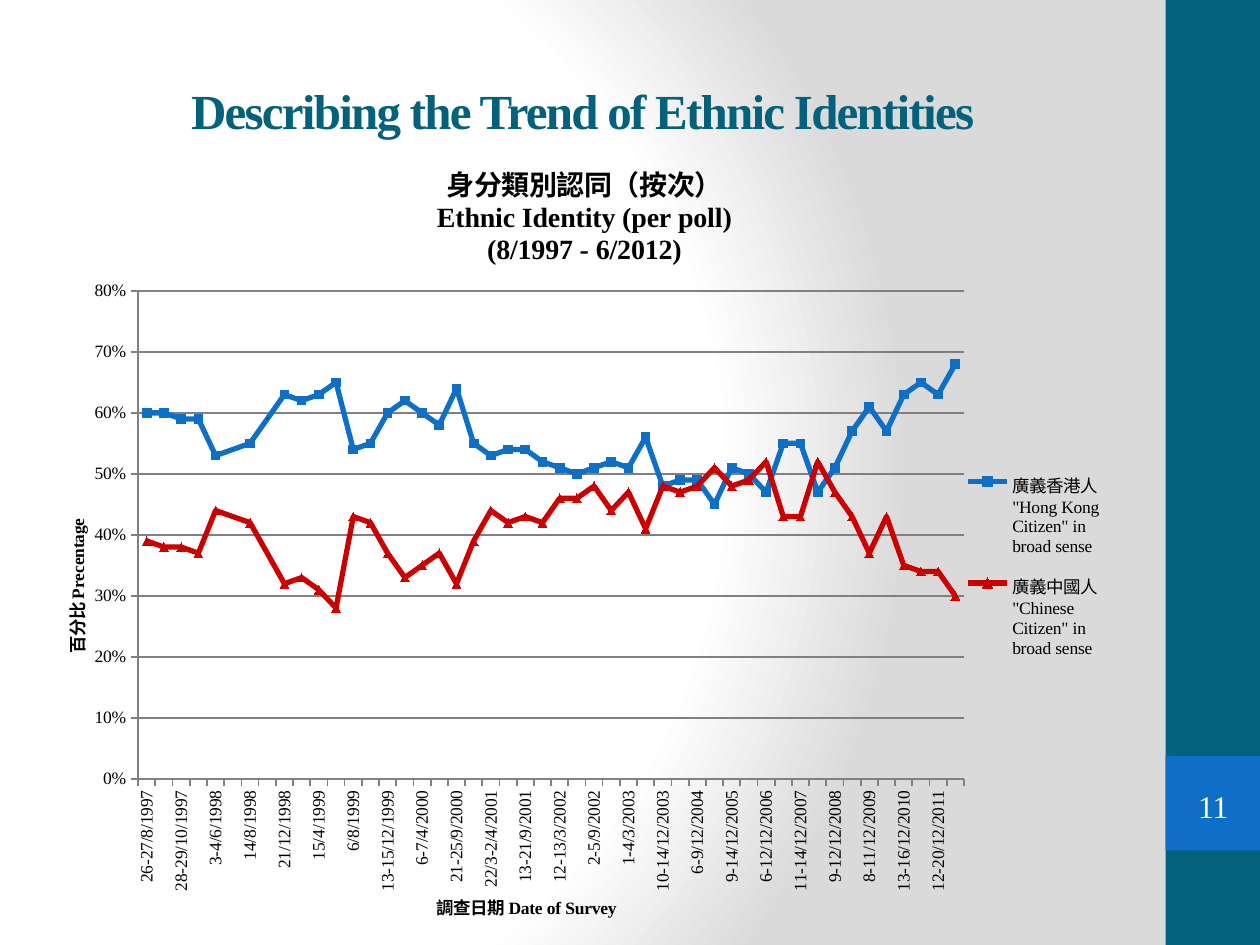
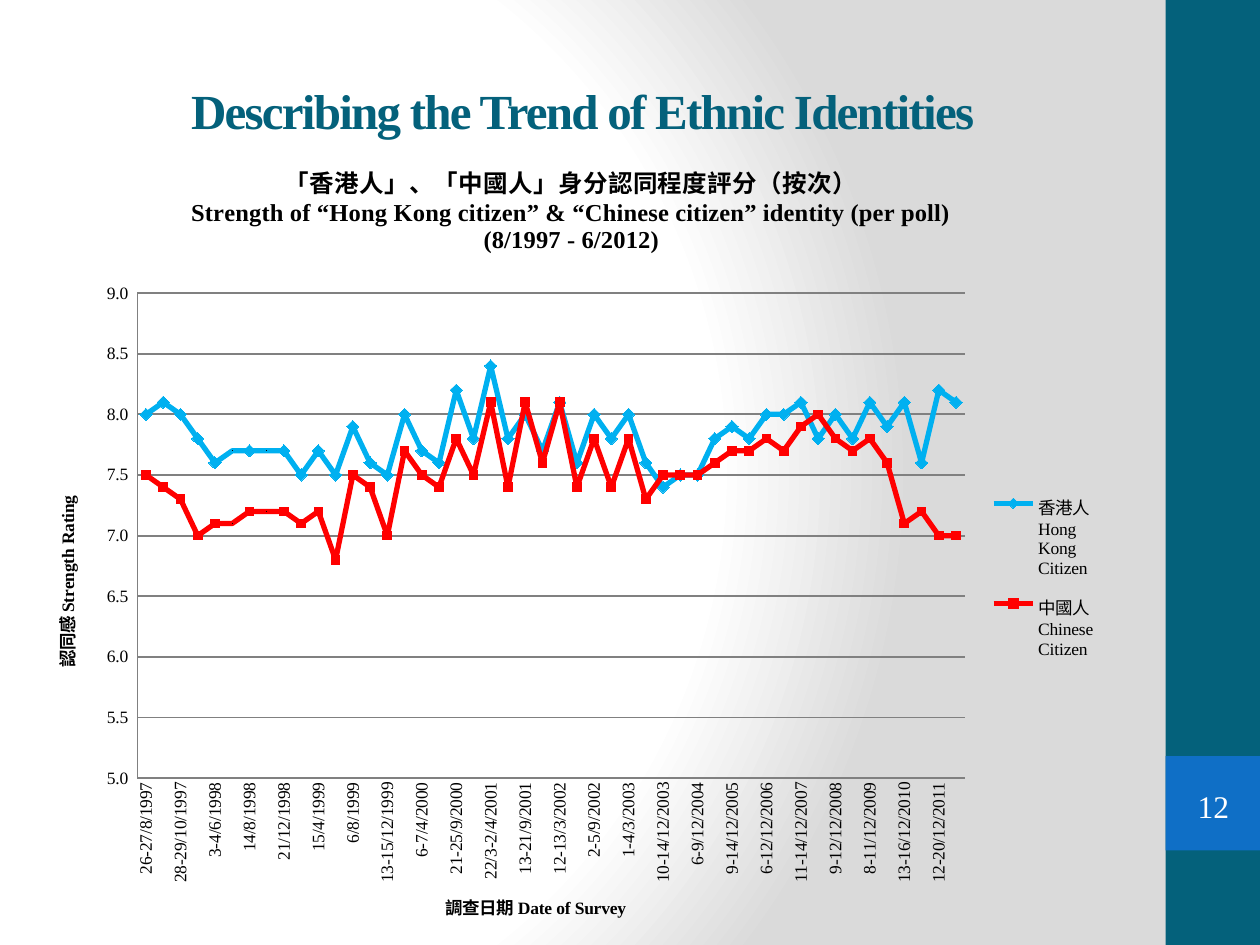
from pptx import Presentation
from pptx.chart.data import CategoryChartData as ChartData
from pptx.dml.color import RGBColor as RGB
from pptx.enum.chart import XL_CHART_TYPE as Kind
from pptx.enum.chart import XL_LEGEND_POSITION as Spot
from pptx.enum.chart import XL_MARKER_STYLE as Mark
from pptx.enum.chart import XL_TICK_MARK as Tick
from pptx.enum.shapes import MSO_SHAPE as Shape
from pptx.enum.text import MSO_ANCHOR as Anchor
from pptx.enum.text import PP_ALIGN as Align
from pptx.oxml import parse_xml
from pptx.oxml.ns import nsdecls
from pptx.util import Inches, Pt

TEAL = RGB(0x04, 0x61, 0x7B)
BLUE = RGB(0x0F, 0x6F, 0xC6)
SKY = RGB(0x00, 0xB0, 0xF0)
CRIMSON = RGB(0xCC, 0x00, 0x00)
RED = RGB(0xFF, 0x00, 0x00)
GRAY = RGB(0x80, 0x80, 0x80)
BLACK = RGB(0x00, 0x00, 0x00)
WHITE = RGB(0xFF, 0xFF, 0xFF)
FONT = "Times New Roman"
UPRIGHT = "-5400000"

HEAD = "Describing the Trend of Ethnic Identities "
DATES = """
26-27/8/1997 23-24/9/1997 28-29/10/1997 8-9/12/1997 3-4/6/1998 22-24/6/1998
14/8/1998 29/9/1998 21/12/1998 8-9/2/1999 15/4/1999 8/6/1999
6/8/1999 26-27/10/1999 13-15/12/1999 1-2/2/2000 6-7/4/2000 7-8/6/2000
21-25/9/2000 4-12/12/2000 22/3-2/4/2001 1-5/6/2001 13-21/9/2001 7-9/12/2001
12-13/3/2002 4-5/6/2002 2-5/9/2002 13-18/12/2002 1-4/3/2003 13-18/6/2003
10-14/12/2003 7-11/6/2004 6-9/12/2004 6-8/6/2005 9-14/12/2005 13-15/6/2006
6-12/12/2006 8-12/6/2007 11-14/12/2007 11-13/6/2008 9-12/12/2008 8-13/6/2009
8-11/12/2009 9-13/6/2010 13-16/12/2010 21-22/6/2011 12-20/12/2011 13-20/6/2012
""".split()
UNPOLLED = (DATES.index("22-24/6/1998"), DATES.index("29/9/1998"))

SHARE_HK = [
    0.6, 0.6, 0.59, 0.59, 0.53, 0.54, 0.55, 0.59, 0.63, 0.62, 0.63, 0.65,
    0.54, 0.55, 0.6, 0.62, 0.6, 0.58, 0.64, 0.55, 0.53, 0.54, 0.54, 0.52,
    0.51, 0.5, 0.51, 0.52, 0.51, 0.56, 0.48, 0.49, 0.49, 0.45, 0.51, 0.5,
    0.47, 0.55, 0.55, 0.47, 0.51, 0.57, 0.61, 0.57, 0.63, 0.65, 0.63, 0.68]
SHARE_CN = [
    0.39, 0.38, 0.38, 0.37, 0.44, 0.43, 0.42, 0.37, 0.32, 0.33, 0.31, 0.28,
    0.43, 0.42, 0.37, 0.33, 0.35, 0.37, 0.32, 0.39, 0.44, 0.42, 0.43, 0.42,
    0.46, 0.46, 0.48, 0.44, 0.47, 0.41, 0.48, 0.47, 0.48, 0.51, 0.48, 0.49,
    0.52, 0.43, 0.43, 0.52, 0.47, 0.43, 0.37, 0.43, 0.35, 0.34, 0.34, 0.3]
RATE_HK = [
    8, 8.1, 8, 7.8, 7.6, 7.7, 7.7, 7.7, 7.7, 7.5, 7.7, 7.5,
    7.9, 7.6, 7.5, 8, 7.7, 7.6, 8.2, 7.8, 8.4, 7.8, 8, 7.7,
    8.1, 7.6, 8, 7.8, 8, 7.6, 7.4, 7.5, 7.5, 7.8, 7.9, 7.8,
    8, 8, 8.1, 7.8, 8, 7.8, 8.1, 7.9, 8.1, 7.6, 8.2, 8.1]
RATE_CN = [
    7.5, 7.4, 7.3, 7, 7.1, 7.1, 7.2, 7.2, 7.2, 7.1, 7.2, 6.8,
    7.5, 7.4, 7, 7.7, 7.5, 7.4, 7.8, 7.5, 8.1, 7.4, 8.1, 7.6,
    8.1, 7.4, 7.8, 7.4, 7.8, 7.3, 7.5, 7.5, 7.5, 7.6, 7.7, 7.7,
    7.8, 7.7, 7.9, 8, 7.8, 7.7, 7.8, 7.6, 7.1, 7.2, 7, 7]


def set_back(prs):
    """Give the slide master a round white-to-gray gradient."""
    stops = "".join(
        f'<a:gs pos="{pos}000"><a:srgbClr val="{tone}"/></a:gs>'
        for pos, tone in ((0, "FFFFFF"), (75, "FFFFFF"), (100, "DADADA")))
    base = prs.slide_master.element.cSld
    for old in base.xpath("p:bg"):
        base.remove(old)
    base.insert(0, parse_xml(
        f'<p:bg {nsdecls("p", "a")}><p:bgPr><a:gradFill rotWithShape="1">'
        f'<a:gsLst>{stops}</a:gsLst><a:path path="circle">'
        '<a:fillToRect l="20000" t="50000" r="100000" b="50000"/></a:path>'
        '</a:gradFill><a:effectLst/></p:bgPr></p:bg>'))


def add_run(para, text, size, color=BLACK, bold=False):
    run = para.add_run()
    run.text = text
    font = run.font
    font.name, font.size, font.bold = FONT, Pt(size), bold
    font.color.rgb = color


def add_band(slide, top, high, color):
    band = slide.shapes.add_shape(
        Shape.RECTANGLE, Inches(9.25), Inches(top), Inches(0.75), Inches(high))
    band.shadow.inherit = False
    band.fill.solid()
    band.fill.fore_color.rgb = color
    band.line.fill.background()


def add_page(slide, number):
    """Put the page number on the side band."""
    box = slide.shapes.add_shape(
        Shape.DOUBLE_BRACKET, Inches(9.33), Inches(6.18), Inches(0.6), Inches(0.43))
    box.shadow.inherit = False
    box.adjustments[0] = 0.18
    box.fill.background()
    box.line.fill.background()
    frame = box.text_frame
    frame.margin_left = frame.margin_right = 0
    frame.margin_top = frame.margin_bottom = 0
    frame.vertical_anchor = Anchor.MIDDLE
    para = frame.paragraphs[0]
    para.alignment = Align.CENTER
    add_run(para, str(number), 18, WHITE)


def add_slide(prs, number):
    slide = prs.slides.add_slide(prs.slide_layouts[5])
    add_band(slide, 0, 7.5, TEAL)
    add_band(slide, 6, 0.75, BLUE)
    title = slide.shapes.title
    title.left, title.top = Inches(0.5), Inches(0.44)
    title.width, title.height = Inches(8.33), Inches(0.87)
    title.text_frame.vertical_anchor = Anchor.MIDDLE
    para = title.text_frame.paragraphs[0]
    para.alignment = Align.CENTER
    add_run(para, HEAD, 28, TEAL, True)
    title.element.xpath(".//a:rPr")[0].set("spc", "-100")
    add_page(slide, number)
    return slide


def place(part, x, y, w=None, h=None, inner=False):
    """Fix a chart part at fractions of the chart's size."""
    for old in part.xpath("c:layout"):
        part.remove(old)
    rules = [("layoutTarget", "inner")] if inner else []
    rules += [("xMode", "edge"), ("yMode", "edge"), ("x", x), ("y", y)]
    if w:
        rules += [("w", w), ("h", h)]
    inside = "".join(f'<c:{key} val="{val}"/>' for key, val in rules)
    layout = parse_xml(f'<c:layout {nsdecls("c")}><c:manualLayout>{inside}'
                       '</c:manualLayout></c:layout>')
    cover = part.xpath("c:overlay")
    if cover:
        cover[0].addprevious(layout)
    else:
        part.insert(0, layout)


def fill_title(owner, lines, size):
    frame = owner.text_frame
    for i, text in enumerate(lines):
        para = frame.add_paragraph() if i else frame.paragraphs[0]
        add_run(para, text, size, bold=True)


def style_axis(axis, name, tick):
    axis.major_tick_mark, axis.minor_tick_mark = tick, Tick.NONE
    axis.format.line.color.rgb = GRAY
    axis.format.line.width = Pt(1)
    font = axis.tick_labels.font
    font.name, font.size, font.color.rgb = FONT, Pt(10), BLACK
    fill_title(axis.axis_title, [name], 10)


def style_line(line, color, mark, size):
    line.smooth = False
    line.format.line.color.rgb = color
    line.format.line.width = Pt(3)
    marker = line.marker
    marker.style, marker.size = mark, size
    marker.format.fill.solid()
    marker.format.fill.fore_color.rgb = color
    marker.format.line.color.rgb = color
    for i in UNPOLLED:
        point = line.points[i]
        point.marker.style = Mark.NONE
        point.format.line.color.rgb = color
        point.format.line.width = Pt(3)


def add_trend(slide, left, wide, lines, size, label, scale, code, tick, rows, spots):
    """Add a line chart; rows hold name, values, colour, marker and its size."""
    data = ChartData()
    data.categories = DATES
    for name, vals, *_ in rows:
        data.add_series(name, vals)
    chart = slide.shapes.add_chart(
        Kind.LINE_MARKERS, Inches(left), Inches(1.25), Inches(wide), Inches(6.09),
        data).chart
    chart.font.name, chart.font.size = FONT, Pt(10)
    chart.font.color.rgb = BLACK
    chart.has_title = True
    fill_title(chart.chart_title, lines, size)
    chart.has_legend = True
    chart.legend.position = Spot.RIGHT
    chart.legend.include_in_layout = False
    chart.legend.font.name, chart.legend.font.size = FONT, Pt(10)

    style_axis(chart.category_axis, "調查日期 Date of Survey", tick)
    axis = chart.value_axis
    style_axis(axis, label, tick)
    axis.minimum_scale, axis.maximum_scale, axis.major_unit = scale
    axis.tick_labels.number_format = code
    axis.tick_labels.number_format_is_linked = False
    axis.has_major_gridlines = True
    axis.major_gridlines.format.line.color.rgb = GRAY
    axis.major_gridlines.format.line.width = Pt(1)

    plot = chart.plots[0]
    plot.vary_by_categories = False
    for line, (_, _, *look) in zip(plot.series, rows):
        style_line(line, *look)

    root = chart.element
    for body in root.xpath(".//c:catAx/c:txPr/a:bodyPr | .//c:valAx/c:title//a:bodyPr"):
        body.set("rot", UPRIGHT)
        body.set("vert", "horz")
    last = root.xpath(".//c:catAx/c:noMultiLvlLbl")[0]
    for key, step in (("tickLblSkip", 2), ("tickMarkSkip", 1)):
        last.addprevious(parse_xml(f'<c:{key} {nsdecls("c")} val="{step}"/>'))
    for query, spot in spots.items():
        place(root.xpath(query)[0], *spot, inner=query.endswith("plotArea"))


def main():
    prs = Presentation()
    prs.slide_width, prs.slide_height = Inches(10), Inches(7.5)
    set_back(prs)

    add_trend(
        add_slide(prs, 11), 0.47, 8.36,
        ["身分類別認同（按次）", "Ethnic Identity (per poll)", "(8/1997 - 6/2012)"], 16,
        "百分比 Precentage", (0, 0.8, 0.1), "0%", Tick.OUTSIDE,
        [('廣義香港人 "Hong Kong Citizen" in broad sense', SHARE_HK, BLUE, Mark.SQUARE, 5),
         ('廣義中國人 "Chinese Citizen" in broad sense', SHARE_CN, CRIMSON,
          Mark.TRIANGLE, 5)],
        {"c:chart/c:title": (0.355, 0),
         ".//c:catAx/c:title": (0.355, 0.96),
         ".//c:valAx/c:title": (0, 0.47),
         ".//c:plotArea": (0.075, 0.175, 0.784, 0.64),
         ".//c:legend": (0.86, 0.39, 0.13, 0.29)})

    add_trend(
        add_slide(prs, 12), 0.39, 8.44,
        ["「香港人」、「中國人」身分認同程度評分（按次）",
         "Strength of “Hong Kong citizen” & “Chinese citizen” identity (per poll)",
         "(8/1997 - 6/2012)"], 14,
        "認同感 Strength Rating", (5, 9, 0.5), r"0.0_);[Red]\(0.0\)", Tick.NONE,
        [("香港人 Hong Kong Citizen", RATE_HK, SKY, Mark.DIAMOND, 7),
         ("中國人 Chinese Citizen", RATE_CN, RED, Mark.SQUARE, 5)],
        {"c:chart/c:title": (0.13, 0),
         ".//c:catAx/c:title": (0.37, 0.96),
         ".//c:valAx/c:title": (0, 0.44),
         ".//c:plotArea": (0.083, 0.178, 0.778, 0.636),
         ".//c:legend": (0.88, 0.42, 0.11, 0.26)})

    prs.save("out.pptx")


if __name__ == "__main__":
    main()
